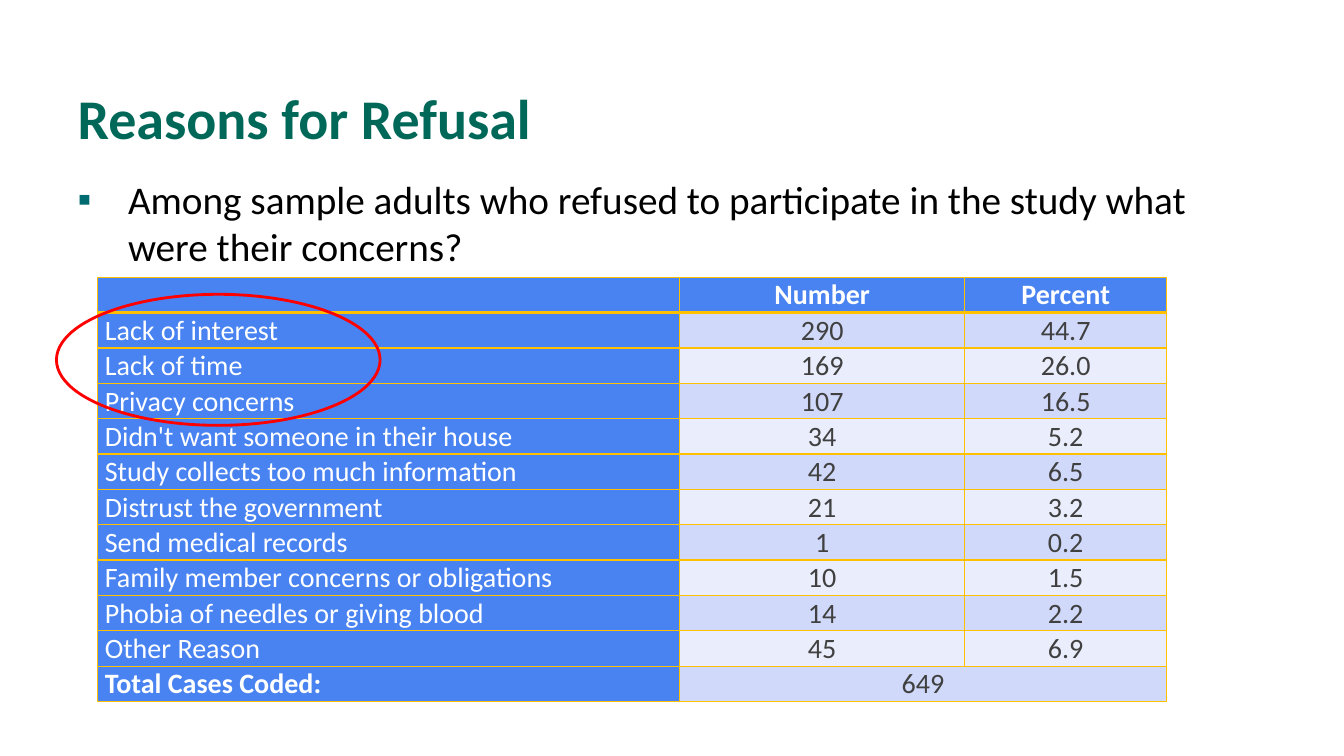
from lxml.etree import SubElement
from pptx import Presentation
from pptx.dml.color import RGBColor
from pptx.enum.shapes import MSO_SHAPE
from pptx.enum.text import MSO_ANCHOR, MSO_AUTO_SIZE, PP_ALIGN
from pptx.oxml.ns import qn
from pptx.util import Inches, Pt

COLORS = {
    "title": "006858", "bullet": "006A71", "body": "000000", "header": "4983F2",
    "odd": "D0D9FA", "even": "E9EDFC", "white": "FFFFFF", "value": "404040",
    "border": "FFC000", "highlight": "FF0000",
}


def write_text(text_frame, text, size=20, color="body", bold=False, align=PP_ALIGN.LEFT):
    paragraph = text_frame.paragraphs[0]
    paragraph.alignment = align
    run = paragraph.add_run()
    run.text = text
    run.font.name = "Calibri"
    run.font.size = Pt(size)
    run.font.bold = bold
    run.font.color.rgb = RGBColor.from_string(COLORS[color])
    return paragraph


def add_border(cell, side, width):
    line = SubElement(cell._tc.get_or_add_tcPr(), qn(f"a:ln{side}"), w=str(Pt(width)))
    fill = SubElement(line, qn("a:solidFill"))
    SubElement(fill, qn("a:srgbClr"), val=COLORS["border"])


presentation = Presentation()
presentation.slide_width = Inches(13.33)
presentation.slide_height = Inches(7.5)
slide = presentation.slides.add_slide(presentation.slide_layouts[1])

title = slide.shapes.title
title.left, title.top, title.width, title.height = [Inches(n) for n in (0.67, 0.3, 12, 1.25)]
title.text_frame.vertical_anchor = MSO_ANCHOR.BOTTOM
title.text_frame.auto_size = MSO_AUTO_SIZE.NONE
paragraph = write_text(title.text_frame, "Reasons for Refusal", size=40, color="title", bold=True)
paragraph.line_spacing = Pt(40)

body = slide.placeholders[1]
body.left, body.top, body.width, body.height = [Inches(n) for n in (0.67, 1.69, 12, 4.87)]
body.text_frame.auto_size = MSO_AUTO_SIZE.NONE
question = "Among sample adults who refused to participate in the study what were their concerns?"
paragraph = write_text(body.text_frame, question, size=28)
properties = paragraph._p.get_or_add_pPr()
properties.set("marL", str(Inches(0.5)))
properties.set("indent", str(Inches(-0.5)))
bullet_color = SubElement(properties, qn("a:buClr"))
SubElement(bullet_color, qn("a:srgbClr"), val=COLORS["bullet"])
SubElement(properties, qn("a:buFont"), typeface="Arial")
SubElement(properties, qn("a:buChar"), char="▪")

rows = [
    ("", "Number", "Percent"),
    ("Lack of interest", "290", "44.7"),
    ("Lack of time", "169", "26.0"),
    ("Privacy concerns", "107", "16.5"),
    ("Didn't want someone in their house", "34", "5.2"),
    ("Study collects too much information", "42", "6.5"),
    ("Distrust the government", "21", "3.2"),
    ("Send medical records", "1", "0.2"),
    ("Family member concerns or obligations", "10", "1.5"),
    ("Phobia of needles or giving blood", "14", "2.2"),
    ("Other Reason", "45", "6.9"),
    ("Total Cases Coded:", "649", ""),
]
last_row = len(rows) - 1
table = slide.shapes.add_table(
    len(rows), 3, Inches(0.97), Inches(2.75), Inches(10.6), Inches(4.21)
).table
for column, width in zip(table.columns, (5.77, 2.83, 2)):
    column.width = Inches(width)

for row_index, row in enumerate(rows):
    table.rows[row_index].height = Inches(4.21 / len(rows))
    for column_index, text in enumerate(row):
        cell = table.cell(row_index, column_index)
        is_header = row_index == 0
        is_label = column_index == 0
        cell.margin_left = cell.margin_right = Inches(0.07)
        cell.margin_top = cell.margin_bottom = 0
        cell.vertical_anchor = MSO_ANCHOR.BOTTOM
        for side in "LRTB":
            under_header = (row_index, side) in ((0, "B"), (1, "T"))
            add_border(cell, side, 3 if under_header else 1)
        band = "odd" if row_index % 2 else "even"
        fill_name = "header" if is_header or is_label else band
        cell.fill.solid()
        cell.fill.fore_color.rgb = RGBColor.from_string(COLORS[fill_name])
        if text:
            write_text(
                cell.text_frame, text,
                color="white" if is_header or is_label else "value",
                bold=is_header or (is_label and row_index == last_row),
                align=PP_ALIGN.LEFT if is_label else PP_ALIGN.CENTER,
            )
table.cell(last_row, 1).merge(table.cell(last_row, 2))

ellipse = slide.shapes.add_shape(
    MSO_SHAPE.OVAL, Inches(0.56), Inches(2.92), Inches(3.21), Inches(1.3)
)
ellipse.shadow.inherit = False
ellipse.fill.background()
ellipse.line.color.rgb = RGBColor.from_string(COLORS["highlight"])
ellipse.line.width = Pt(2)

presentation.save("out.pptx")
